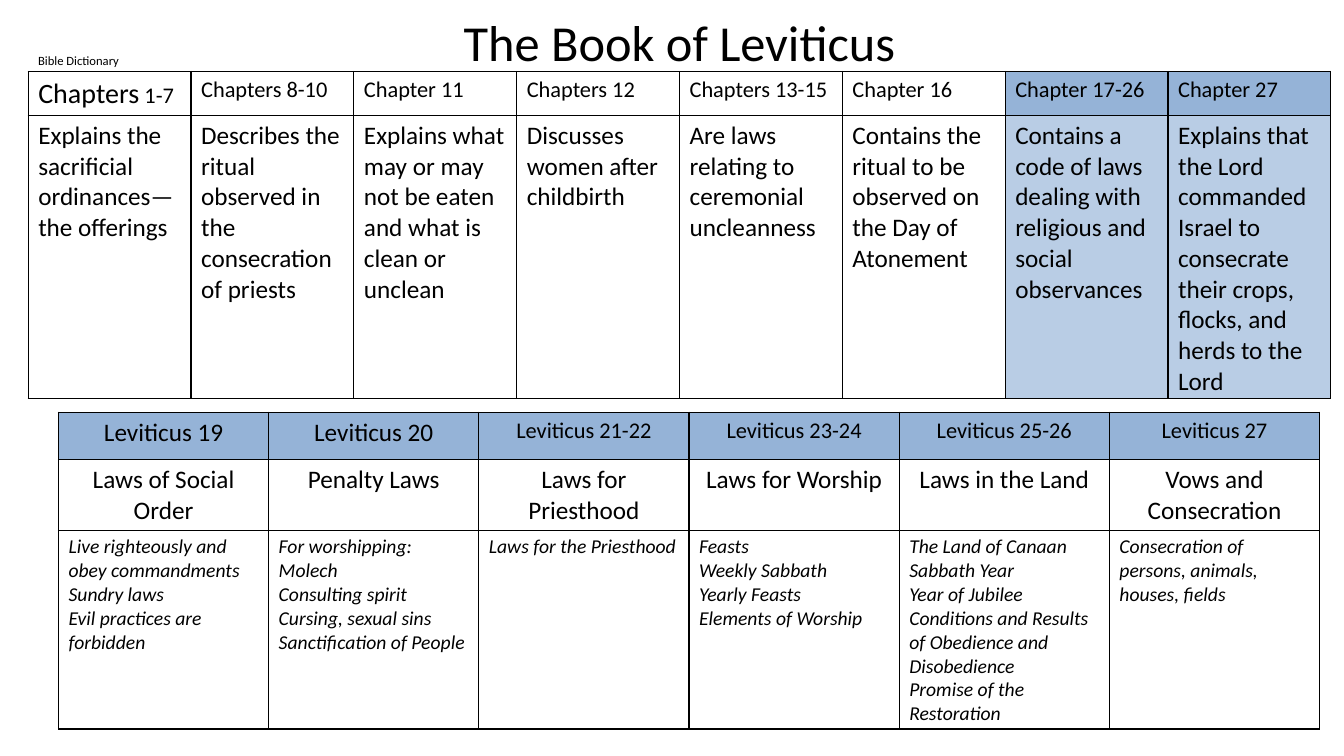
from lxml import etree
from pptx import Presentation
from pptx.dml.color import RGBColor
from pptx.enum.text import MSO_AUTO_SIZE, PP_ALIGN
from pptx.oxml.ns import qn
from pptx.util import Inches, Pt

LEFT, CENTER = PP_ALIGN.LEFT, PP_ALIGN.CENTER
GROW = MSO_AUTO_SIZE.SHAPE_TO_FIT_TEXT
SLIDE_SIZE = 13.33, 7.5
BLACK, WHITE, BLUE, PALE_BLUE = "000000", "FFFFFF", "95B3D7", "B9CDE5"
BORDER_WIDTH = Pt(1)

CHAPTERS = [
    ("Chapters 1-7", "Explains the sacrificial ordinances—the offerings"),
    ("Chapters 8-10", "Describes the ritual observed in the consecration of priests"),
    ("Chapter 11", "Explains what may or may not be eaten and what is clean or unclean"),
    ("Chapters 12", "Discusses women after childbirth"),
    ("Chapters 13-15", "Are laws relating to ceremonial uncleanness"),
    ("Chapter 16", "Contains the ritual to be observed on the Day of Atonement"),
    ("Chapter 17-26", "Contains a code of laws dealing with religious and social observances"),
    ("Chapter 27", "Explains that the Lord commanded Israel to consecrate their crops, "
                   "flocks, and herds to the Lord"),
]
FIRST_HIGHLIGHT = 6

LAWS = [
    ("Leviticus 19", "Laws of Social Order",
     ["Live righteously and obey commandments", "Sundry laws", "Evil practices are forbidden"]),
    ("Leviticus 20", "Penalty Laws",
     ["For worshipping:", "Molech", "Consulting spirit", "Cursing, sexual sins",
      "Sanctification of People"]),
    ("Leviticus 21-22", "Laws for Priesthood", ["Laws for the Priesthood"]),
    ("Leviticus 23-24", "Laws for Worship",
     ["Feasts", "Weekly Sabbath", "Yearly Feasts", "Elements of Worship"]),
    ("Leviticus 25-26", "Laws in the Land",
     ["The Land of Canaan", "Sabbath Year", "Year of Jubilee",
      "Conditions and Results of Obedience and Disobedience", "Promise of the Restoration"]),
    ("Leviticus 27", "Vows and Consecration",
     ["Consecration of persons, animals, houses, fields"]),
]


def color(value):
    """Turn a hex string into a colour."""
    return RGBColor.from_string(value)


def write(frame, lines, align=LEFT, **formats):
    """Fill a text frame; each line is a list of (text, size) spans."""
    for index, spans in enumerate(lines):
        para = frame.paragraphs[0] if index == 0 else frame.add_paragraph()
        para.alignment = align
        for text, size in spans:
            span = para.add_run()
            span.text = text
            span.font.color.rgb = color(BLACK)
            for name, value in {"name": "Calibri", "size": Pt(size), **formats}.items():
                setattr(span.font, name, value)


def add_label(page, box, text, size, align=LEFT):
    """Place one line of text in a box."""
    frame = page.shapes.add_textbox(*map(Inches, box)).text_frame
    for name, value in {"word_wrap": True, "auto_size": GROW}.items():
        setattr(frame, name, value)
    write(frame, [[(text, size)]], align)


def paint_cell(cell, fill):
    """Give a cell its fill and black borders."""
    if fill:
        cell.fill.solid()
        cell.fill.fore_color.rgb = color(fill)
    else:
        cell.fill.background()
    properties = cell._tc.get_or_add_tcPr()
    for index, side in enumerate(("a:lnL", "a:lnR", "a:lnT", "a:lnB")):
        line = etree.Element(qn(side), w=str(BORDER_WIDTH))
        paint = etree.SubElement(line, qn("a:solidFill"))
        etree.SubElement(paint, qn("a:srgbClr"), val=BLACK)
        properties.insert(index, line)


def add_grid(page, box, row_shares, column_count):
    """Place a plain table with equal columns and rows sized by share of its height."""
    left, top, width, height = box
    table = page.shapes.add_table(len(row_shares), column_count, *map(Inches, box)).table
    for name in ("first_row", "horz_banding"):
        setattr(table, name, False)
    for column in table.columns:
        column.width = Inches(width / column_count)
    for row, share in zip(table.rows, row_shares):
        row.height = Inches(height * share)
    return table


def add_chapters(page, box):
    """Build the table that summarises every group of chapters."""
    table = add_grid(page, box, (0.13, 0.87), len(CHAPTERS))
    for column, (chapter, summary) in enumerate(CHAPTERS):
        highlighted = column >= FIRST_HIGHLIGHT
        heading = [(chapter, 16)]
        if column == 0:
            word, numbers = chapter.split()
            heading = [(word, 20), (f" {numbers}", 16)]
        fills = (BLUE, PALE_BLUE) if highlighted else (WHITE, WHITE)
        for row, spans in enumerate((heading, [(summary, 18)])):
            cell = table.cell(row, column)
            write(cell.text_frame, [spans])
            paint_cell(cell, fills[row])


def add_laws(page, box):
    """Build the table that details the laws of the last chapters."""
    table = add_grid(page, box, (0.15, 0.22, 0.63), len(LAWS))
    for column, (chapter, title, details) in enumerate(LAWS):
        heading_size = 18 if column < 2 else 16
        rows = [
            ([[(chapter, heading_size)]], BLUE, {"align": CENTER}),
            ([[(title, 18)]], None, {"align": CENTER}),
            ([[(detail, 14)] for detail in details], None, {"italic": True}),
        ]
        for row, (lines, fill, formats) in enumerate(rows):
            cell = table.cell(row, column)
            write(cell.text_frame, lines, **formats)
            paint_cell(cell, fill)


def main():
    """Build the slide and save it."""
    deck = Presentation()
    deck.slide_width, deck.slide_height = map(Inches, SLIDE_SIZE)
    page = deck.slides.add_slide(deck.slide_layouts[6])
    add_label(page, (0.28, 0.48, 1.64, 0.25), "Bible Dictionary", 9)
    add_chapters(page, (0.28, 0.71, 12.92, 3.23))
    add_label(page, (0.28, 0.06, 12.92, 0.71), "The Book of Leviticus", 36, CENTER)
    add_laws(page, (0.58, 4.09, 12.51, 3.13))
    deck.save("out.pptx")


if __name__ == "__main__":
    main()
